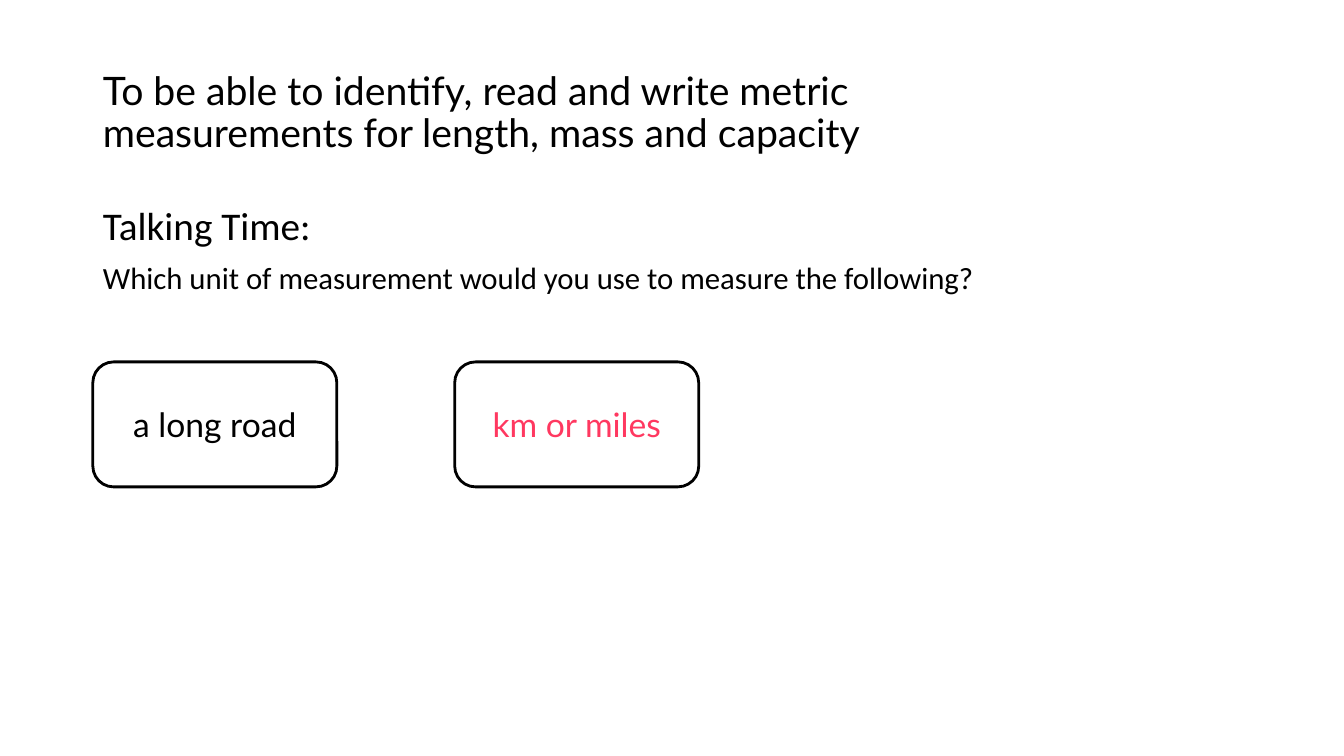
from lxml import etree
from pptx import Presentation
from pptx.dml.color import RGBColor
from pptx.enum import shapes, text
from pptx.oxml import ns
from pptx.util import Cm, Pt

BLACK = RGBColor(0x00, 0x00, 0x00)
WHITE = RGBColor(0xFF, 0xFF, 0xFF)
PINK = RGBColor(0xFF, 0x38, 0x60)
LEFT = 2.34


class Deck:
    def __init__(self):
        self.prs = Presentation()
        self.prs.slide_width, self.prs.slide_height = Cm(33.87), Cm(19.05)
        self.slide = self.prs.slides.add_slide(self.prs.slide_layouts[1])

    def style(self, para, size, font, color=BLACK):
        for run in para.runs:
            run.font.size = Pt(size)
            run.font.name = font
            run.font.color.rgb = color

    def place(self, shape, left, top, width, height):
        shape.left, shape.top = Cm(left), Cm(top)
        shape.width, shape.height = Cm(width), Cm(height)
        shape.text_frame.word_wrap = True
        shape.text_frame.auto_size = text.MSO_AUTO_SIZE.NONE

    def title(self, words, *box):
        shape = self.slide.shapes.title
        self.place(shape, *box)
        frame = shape.text_frame
        frame.text = words
        frame.vertical_anchor = text.MSO_ANCHOR.MIDDLE
        para = frame.paragraphs[0]
        para.alignment = text.PP_ALIGN.LEFT
        para.line_spacing = 0.9
        self.style(para, 28, "Lato")

    def body(self, lines, *box):
        """Fill the body with (words, size) lines, without bullets."""
        shape = self.slide.placeholders[1]
        self.place(shape, *box)
        frame = shape.text_frame
        frame.text = "\n".join(words for words, size in lines)
        for i, (para, (words, size)) in enumerate(zip(frame.paragraphs, lines)):
            props = para._p.get_or_add_pPr()
            props.set("marL", "0")
            props.set("indent", "0")
            etree.SubElement(props, ns.qn("a:buNone"))
            para.line_spacing = 0.9
            para.space_before = Pt(10 if i else 0)
            self.style(para, size, "Calibri")

    def card(self, words, color, left, top):
        shape = self.slide.shapes.add_shape(
            shapes.MSO_SHAPE.ROUNDED_RECTANGLE, 0, 0, 0, 0)
        self.place(shape, left, top, 6.15, 3.15)
        shape.shadow.inherit = False
        shape.fill.solid()
        shape.fill.fore_color.rgb = WHITE
        shape.line.color.rgb = BLACK
        shape.line.width = Pt(2)
        frame = shape.text_frame
        frame.text = words
        frame.vertical_anchor = text.MSO_ANCHOR.MIDDLE
        para = frame.paragraphs[0]
        para.alignment = text.PP_ALIGN.CENTER
        self.style(para, 24, "Lato", color)


def main():
    deck = Deck()
    deck.title("To be able to identify, read and write metric measurements "
               "for length, mass and capacity", LEFT, 1.02, 24.38, 3.68)
    deck.body([("Talking Time:", 28),
               ("Which unit of measurement would you use to measure "
                "the following?", 22)], LEFT, 5.08, 29.21, 12.09)
    cards = [("a long road", BLACK), ("km or miles", PINK)]
    for i, (words, color) in enumerate(cards):
        deck.card(words, color, LEFT + i * 9.12, 9.12)
    deck.prs.save("out.pptx")


if __name__ == "__main__":
    main()
